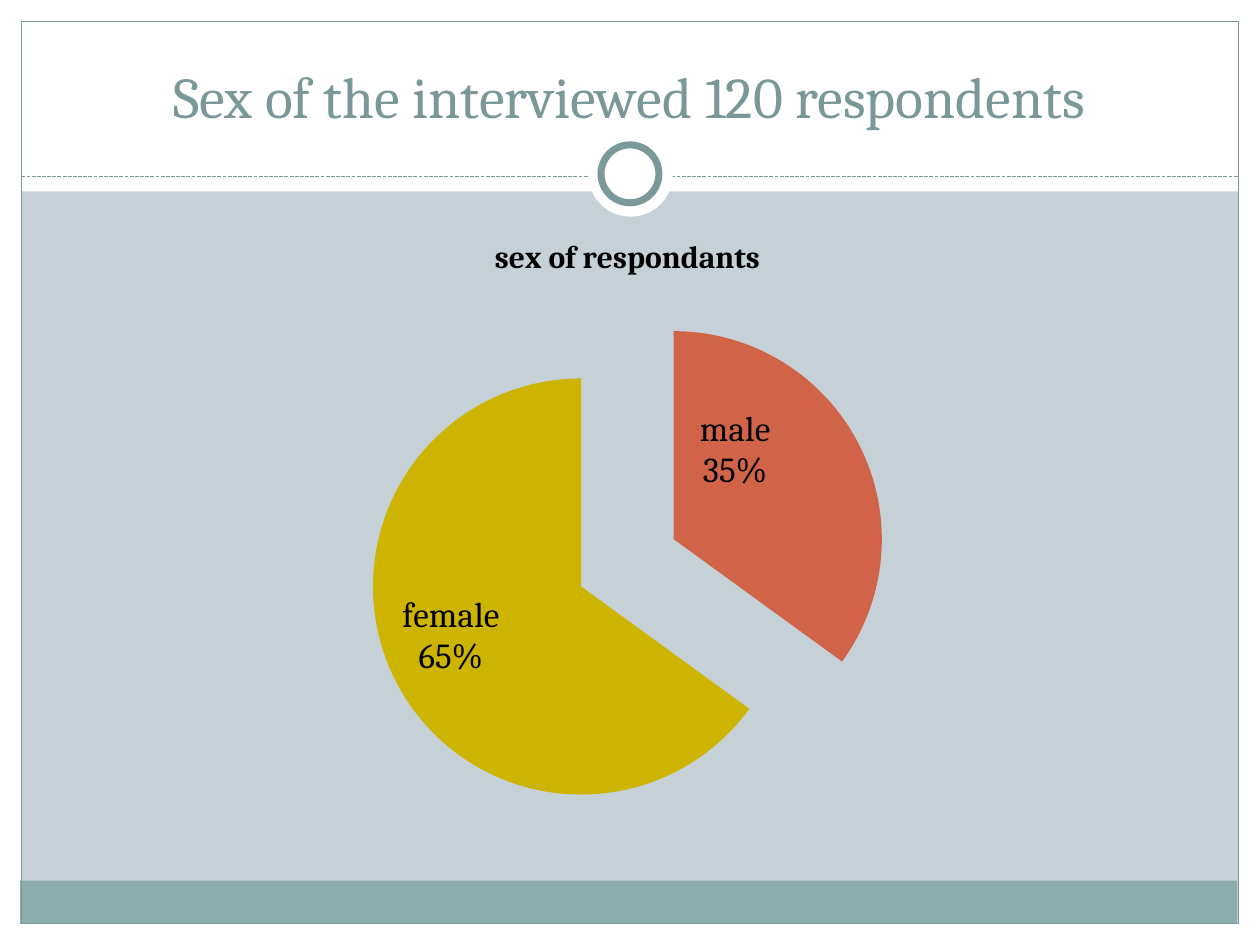
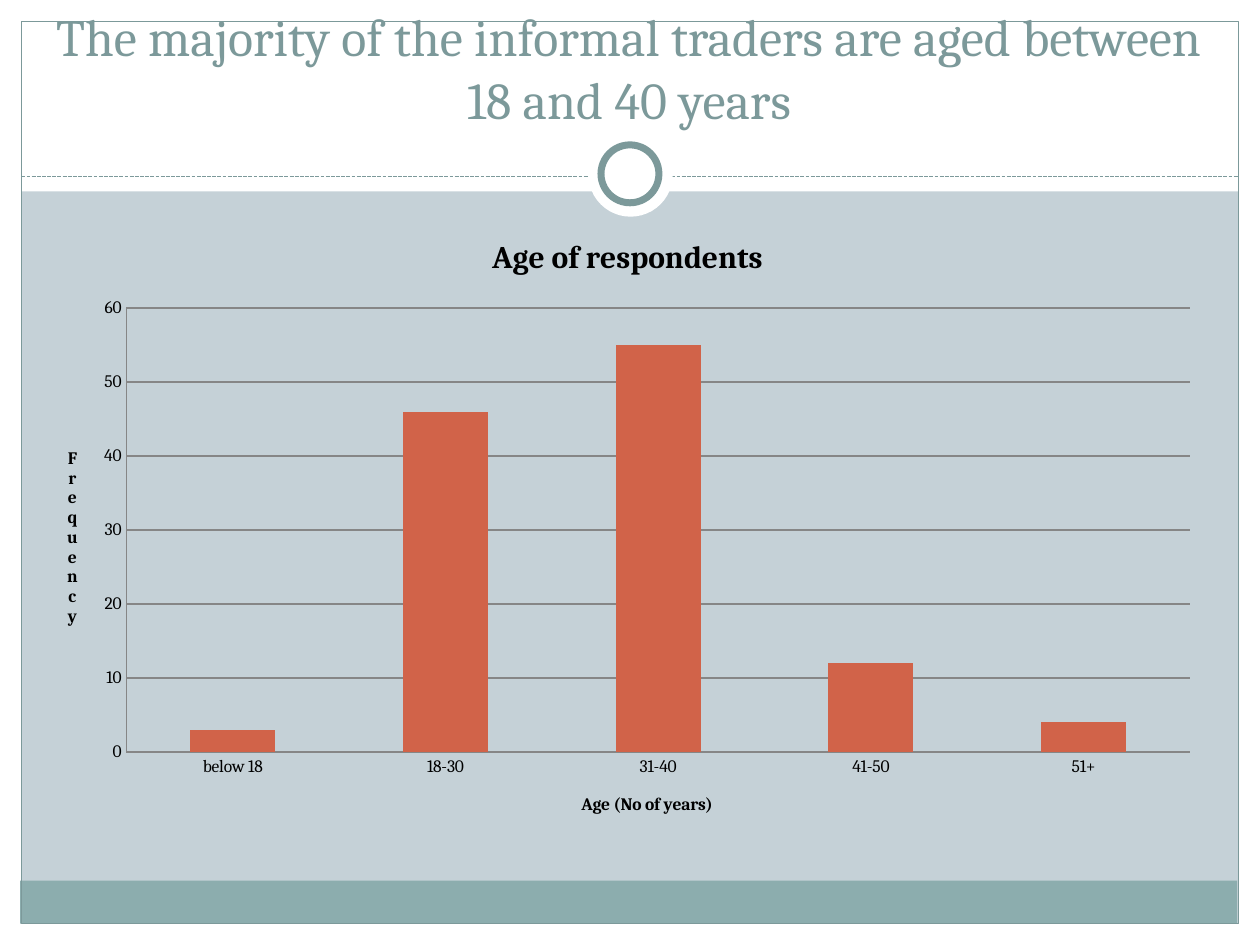
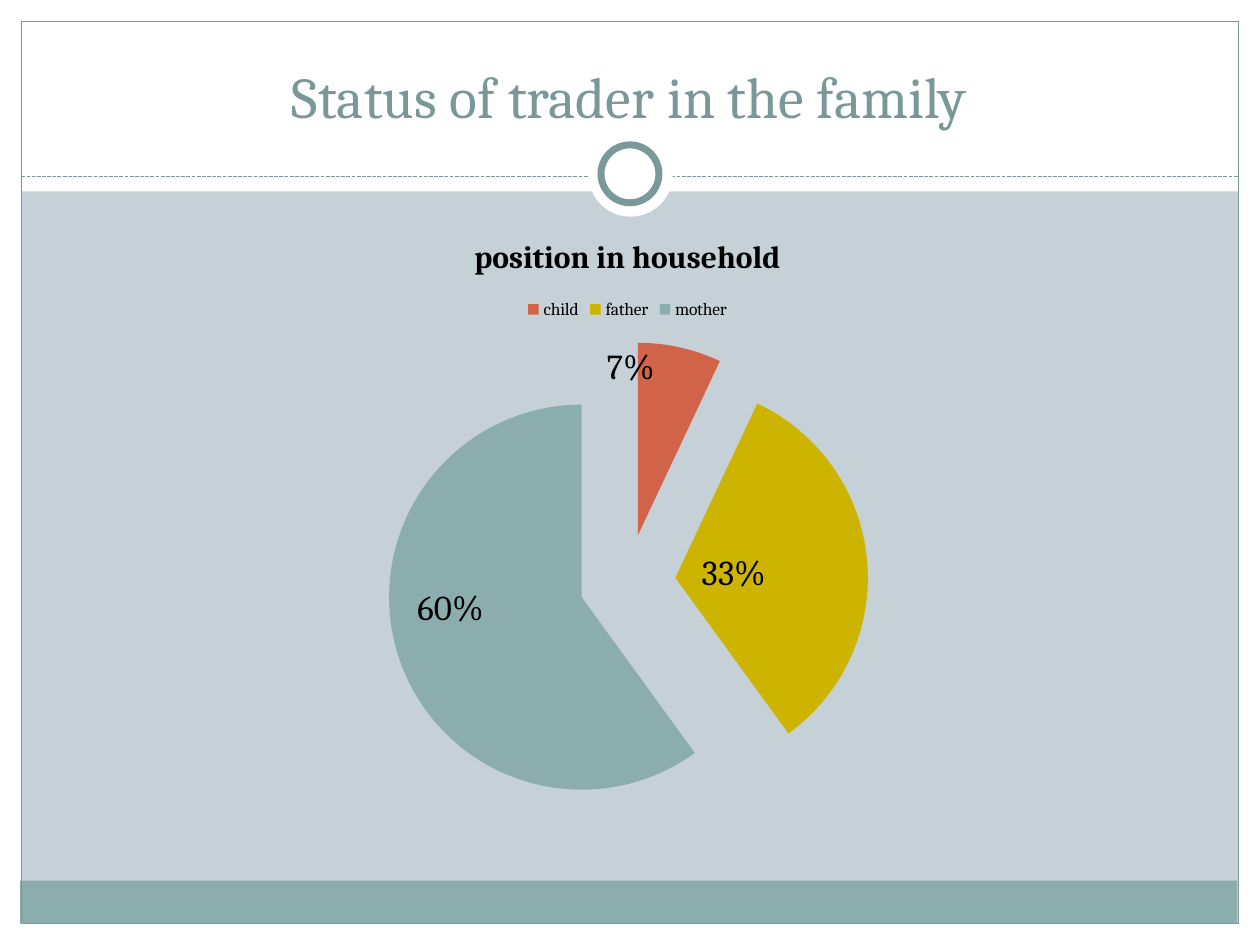
import copy

import lxml.etree
import pptx
import pptx.chart.data
import pptx.dml.color
import pptx.enum.chart
import pptx.enum.dml
import pptx.enum.shapes
import pptx.enum.text
import pptx.oxml
import pptx.oxml.ns
import pptx.util

Inches, Pt = pptx.util.Inches, pptx.util.Pt
RGB = pptx.dml.color.RGBColor
Kind = pptx.enum.chart.XL_CHART_TYPE
Shape = pptx.enum.shapes.MSO_SHAPE
qn = pptx.oxml.ns.qn

# Colours and font
WHITE = RGB(0xFF, 0xFF, 0xFF)
BLACK = RGB(0, 0, 0)
MIST = RGB(0xC5, 0xD1, 0xD7)
TEAL = RGB(0x8C, 0xAD, 0xAE)
SLATE = RGB(0x7C, 0x99, 0x9A)
STEEL = RGB(0x7B, 0x98, 0x99)
GREY = RGB(0x86, 0x86, 0x86)
RUST = RGB(0xD1, 0x63, 0x49)
GOLD = RGB(0xCC, 0xB4, 0x00)
FONT = "Cambria"

# Content; "shift" moves each pie label by a share of the chart's size
SLIDES = [
    {"title": "Sex of the interviewed 120 respondents", "size": 33, "color": STEEL,
     "kind": Kind.PIE, "head": "sex of respondants",
     "data": {"male": 35, "female": 65},
     "shift": [(-0.07, -0.06), (0, 0)], "legend": False},
    {"title": "The majority of the informal traders are aged between 18 and 40 years",
     "size": 29.7, "color": SLATE,
     "kind": Kind.COLUMN_CLUSTERED, "head": "Age of respondents",
     "data": {"below 18": 3, "18-30": 46, "31-40": 55, "41-50": 12, "51+": 4},
     "axes": ("Age (No of years)", "Frequency")},
    {"title": "Status of trader in the family", "size": 33, "color": STEEL,
     "kind": Kind.PIE, "head": "position in household",
     "data": {"child": 7, "father": 33, "mother": 60},
     "shift": [(-0.02, -0.01), (-0.08, -0.01), (0.01, -0.04)], "legend": True},
]

# Frame: shape, place, fill, line colour, line width
FRAME = [
    (Shape.RECTANGLE, (0, 7.33, 10, 0.17), WHITE, None, 0),
    (Shape.RECTANGLE, (0, 0, 10, 1.52), WHITE, None, 0),
    (Shape.RECTANGLE, (0, 0, 0.17, 7.5), WHITE, None, 0),
    (Shape.RECTANGLE, (9.83, 0, 0.17, 7.5), WHITE, None, 0),
    (Shape.RECTANGLE, (0.16, 6.99, 9.66, 0.34), TEAL, None, 0),
    (Shape.RECTANGLE, (0.17, 0.17, 9.66, 7.16), None, SLATE, 0.75),
    ("rule", (0.17, 1.4, 9.83, 1.4), None, SLATE, 0.75),
    (Shape.OVAL, (4.67, 1.05, 0.67, 0.67), WHITE, None, 0),
    (Shape.OVAL, (4.77, 1.15, 0.46, 0.46), WHITE, SLATE, 4),
]
TITLE_BOX = (0.33, 0.25, 9.33, 0.83)
CHART_BOX = (0.33, 1.67, 9.3, 5)


def style(font, color=BLACK, **form):
    for key, val in {"name": FONT, "bold": False, **form}.items():
        setattr(font, key, val)
    font.color.rgb = color


def place(shape, box):
    for key, val in zip(("left", "top", "width", "height"), box):
        setattr(shape, key, Inches(val))


def set_line(line, color, width):
    line.color.rgb = color
    line.width = Pt(width)


def make(tag, **attrs):
    node = pptx.oxml.parse_xml(
        f'<{tag} xmlns:c="{pptx.oxml.ns.nsuri("c")}" xmlns:a="{pptx.oxml.ns.nsuri("a")}"/>')
    for key, val in attrs.items():
        node.set(key, str(val))
    return node


def draw_frame(slide, layout):
    """Draw the frame once and hand it to the layout."""
    for kind, box, fill, color, width in FRAME:
        spots = [Inches(val) for val in box]
        if kind == "rule":
            part = slide.shapes.add_connector(
                pptx.enum.shapes.MSO_CONNECTOR.STRAIGHT, *spots)
            part.line.dash_style = pptx.enum.dml.MSO_LINE.SQUARE_DOT
            part.line._ln.find(qn("a:prstDash")).set("val", "sysDash")
        else:
            part = slide.shapes.add_shape(kind, *spots)
            part.shadow.inherit = False
            if fill is None:
                part.fill.background()
            else:
                part.fill.solid()
                part.fill.fore_color.rgb = fill
        if color is None:
            part.line.fill.background()
        else:
            set_line(part.line, color, width)
        if kind == "rule":
            part._element.spPr.append(make("a:effectLst"))
        layout.shapes.element.append(part._element)


def add_title(slide, item):
    title = slide.shapes.title
    place(title, TITLE_BOX)
    frame = title.text_frame
    frame.text = item["title"]
    form = {"word_wrap": True,
            "auto_size": pptx.enum.text.MSO_AUTO_SIZE.NONE,
            "vertical_anchor": pptx.enum.text.MSO_ANCHOR.BOTTOM}
    for key, val in form.items():
        setattr(frame, key, val)
    para = frame.paragraphs[0]
    para.alignment = pptx.enum.text.PP_ALIGN.CENTER
    style(para.runs[0].font, item["color"], size=Pt(item["size"]))


def write_head(head, text, size):
    head.text_frame.text = text
    style(head.text_frame.paragraphs[0].runs[0].font, size=Pt(size), bold=True)


def dress_pie(chart, item):
    series = chart.plots[0].series[0]
    series._element.find(qn("c:tx")).addnext(make("c:explosion", val=25))
    for num, color in zip(range(len(item["data"])), (RUST, GOLD, TEAL)):
        fill = series.points[num].format.fill
        fill.solid()
        fill.fore_color.rgb = color

    # Labels
    labels = series.data_labels
    form = {"show_value": False, "show_percentage": True,
            "show_category_name": not item["legend"],
            "number_format": "0%", "number_format_is_linked": False,
            "position": pptx.enum.chart.XL_LABEL_POSITION.INSIDE_END}
    for key, val in form.items():
        setattr(labels, key, val)
    style(labels.font, size=Pt(20))
    root = labels._element
    gap = make("c:separator")
    gap.text = "\n"
    root.find(qn("c:showBubbleSize")).addnext(gap)
    shared = [node for node in root if node.tag != qn("c:showLeaderLines")]
    for num, (across, down) in enumerate(item["shift"]):
        label, spot, hand = make("c:dLbl"), make("c:layout"), make("c:manualLayout")
        hand.extend([make("c:x", val=across), make("c:y", val=down)])
        spot.append(hand)
        label.extend([make("c:idx", val=num), spot])
        label.extend(copy.deepcopy(shared))
        root.insert(num, label)


def dress_bars(chart, item):
    plot = chart.plots[0]
    plot.gap_width = 150
    fill = plot.series[0].format.fill
    fill.solid()
    fill.fore_color.rgb = RUST
    axes = (chart.category_axis, chart.value_axis)
    for axis, text in zip(axes, item["axes"]):
        axis.major_tick_mark = pptx.enum.chart.XL_TICK_MARK.NONE
        set_line(axis.format.line, GREY, 0.75)
        write_head(axis.axis_title, text, 10)
    value = chart.value_axis
    value.has_major_gridlines = True
    set_line(value.major_gridlines.format.line, GREY, 0.75)
    body = value.axis_title.text_frame._txBody.bodyPr
    for key, val in {"rot": "0", "vert": "wordArtVert"}.items():
        body.set(key, val)


def add_chart(slide, item):
    data = pptx.chart.data.CategoryChartData()
    data.categories = list(item["data"])
    data.add_series("Series 1", list(item["data"].values()))
    box = [Inches(val) for val in CHART_BOX]
    chart = slide.shapes.add_chart(item["kind"], *box, data).chart
    style(chart.font, size=Pt(10))
    chart.has_title = True
    write_head(chart.chart_title, item["head"], 18)
    chart.has_legend = item.get("legend", False)
    if chart.has_legend:
        chart.legend.position = pptx.enum.chart.XL_LEGEND_POSITION.TOP
        chart.legend.include_in_layout = False
    is_pie = item["kind"] == Kind.PIE
    chart.plots[0].vary_by_categories = is_pie
    (dress_pie if is_pie else dress_bars)(chart, item)


def main():
    deck = pptx.Presentation()
    deck.slide_width, deck.slide_height = Inches(10), Inches(7.5)
    layout = deck.slide_layouts[5]

    # Shared layout
    for holder in list(layout.placeholders):
        if holder.placeholder_format.idx != 0:
            layout.shapes.element.remove(holder._element)
    layout.background.fill.solid()
    layout.background.fill.fore_color.rgb = MIST

    # Slides
    for num, item in enumerate(SLIDES):
        slide = deck.slides.add_slide(layout)
        if num == 0:
            draw_frame(slide, layout)
        add_title(slide, item)
        add_chart(slide, item)
    deck.save("out.pptx")


if __name__ == "__main__":
    main()
